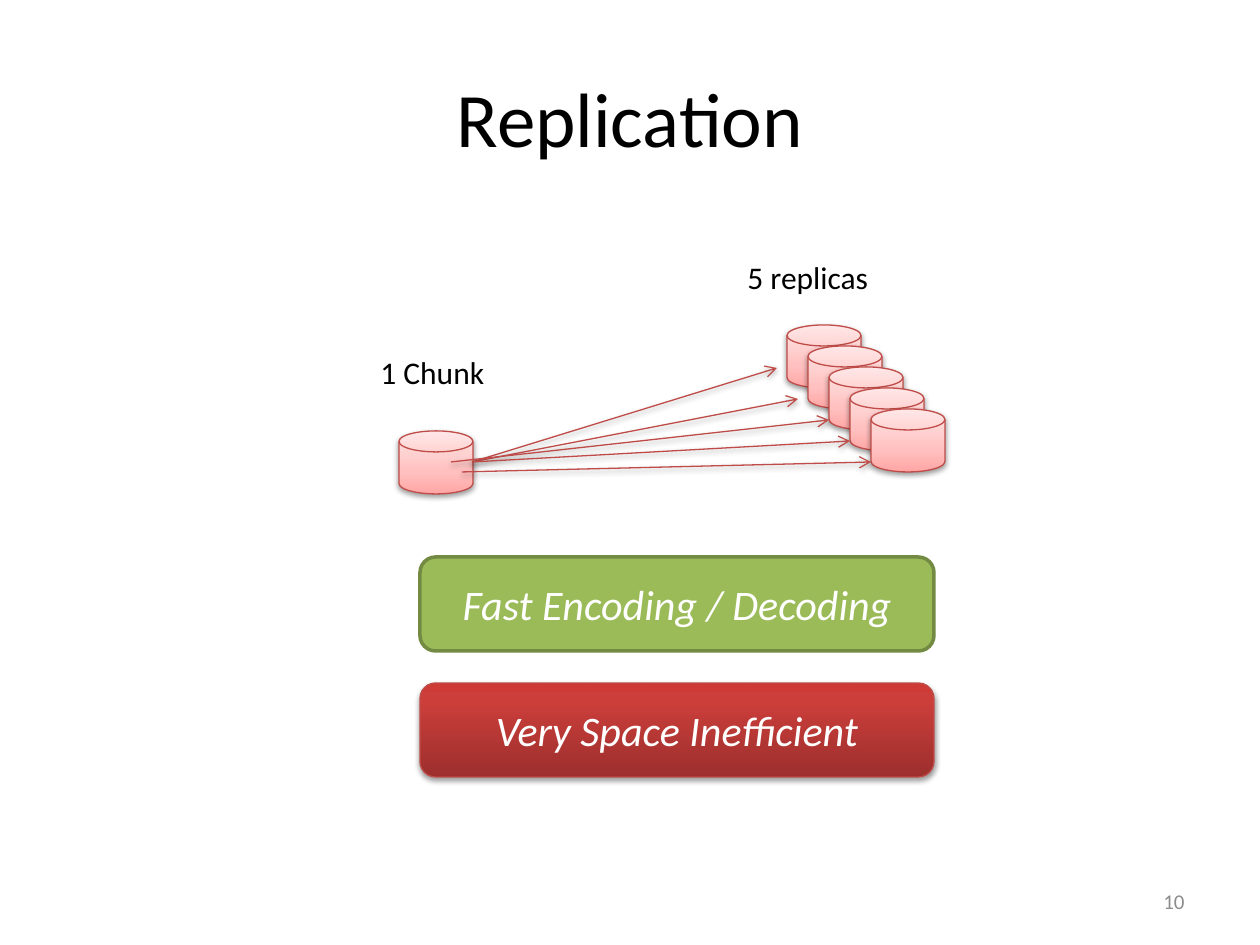
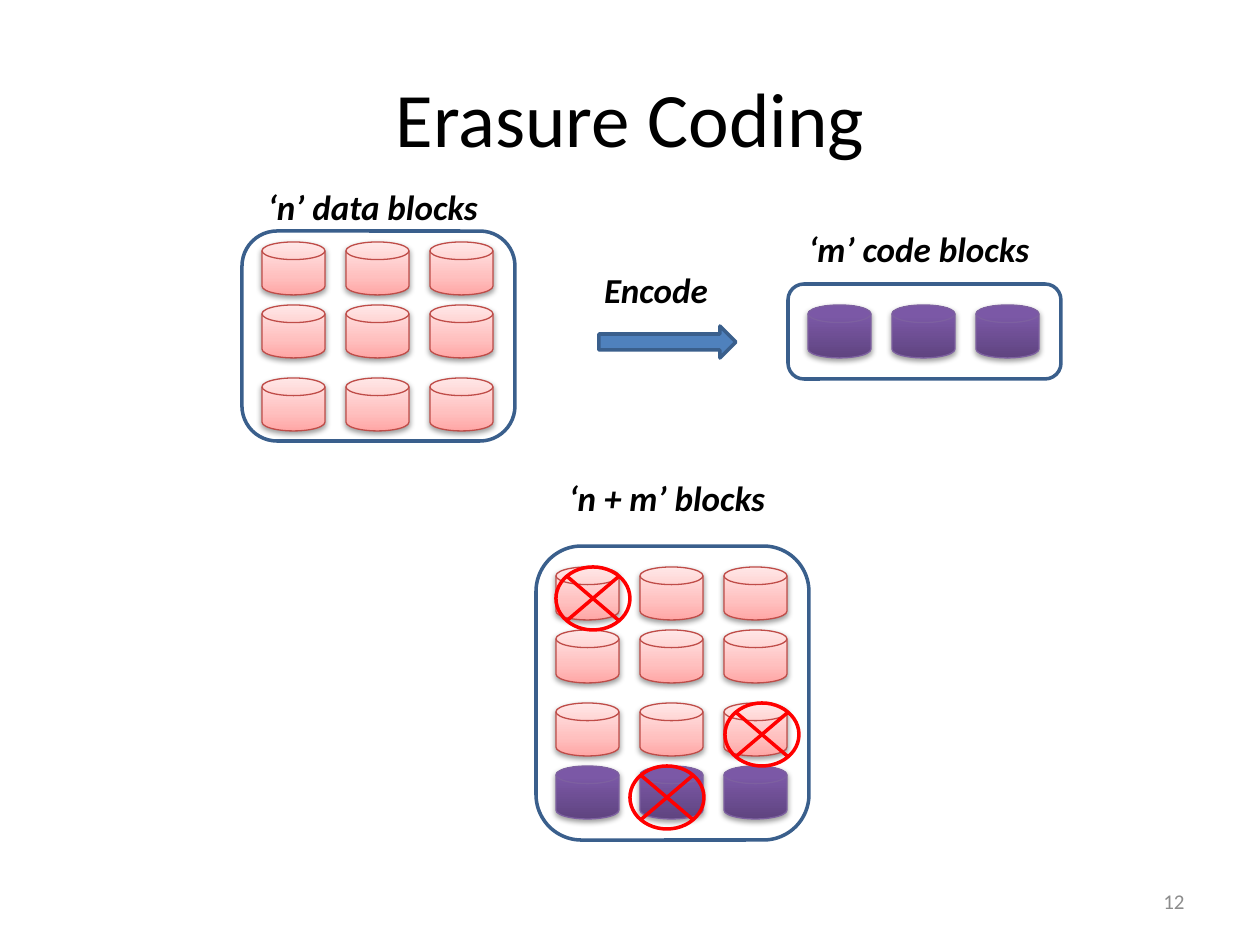
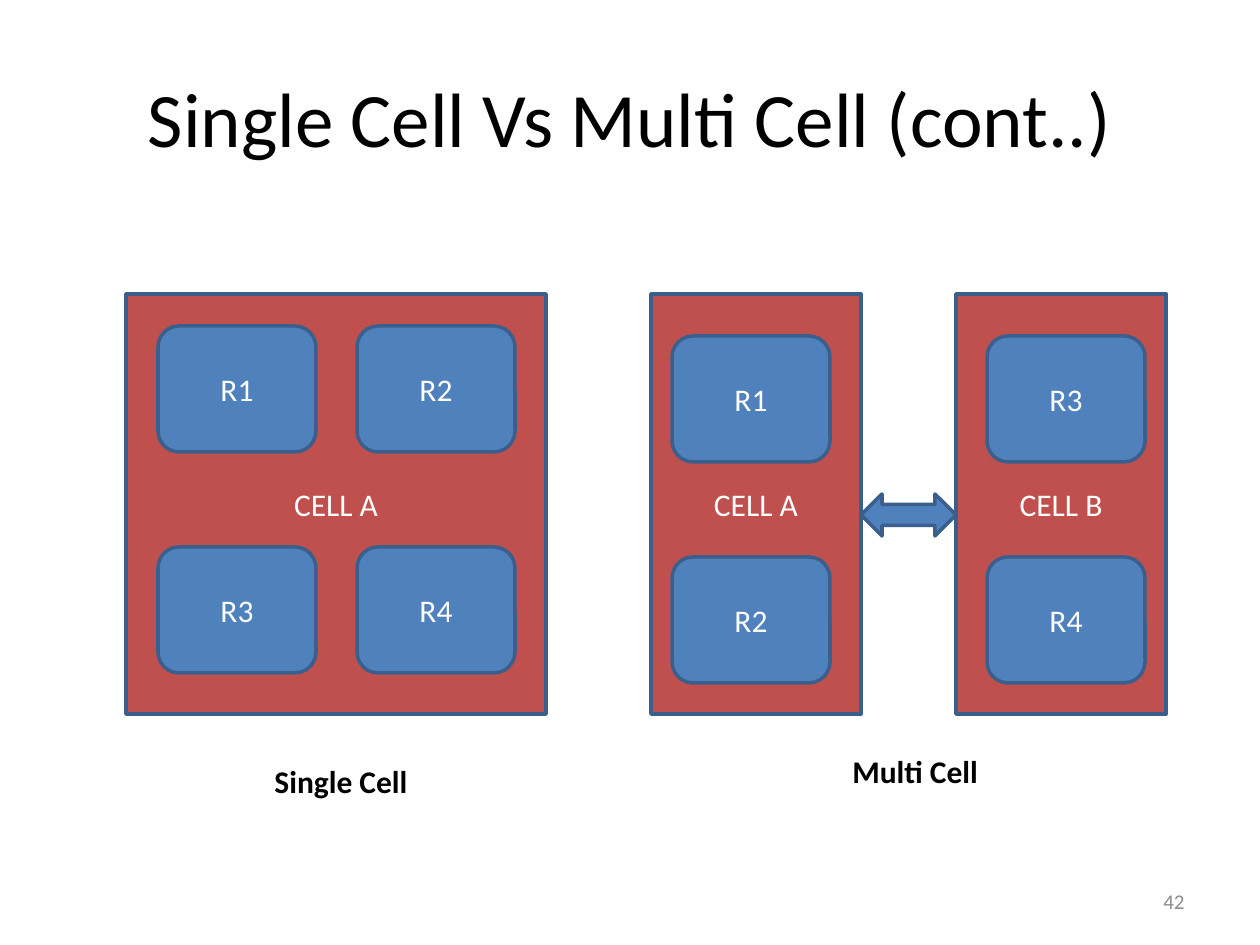
from copy import deepcopy

from pptx import Presentation
from pptx.dml.color import RGBColor
from pptx.enum.shapes import MSO_CONNECTOR as LINK, MSO_SHAPE as KIND
from pptx.enum.text import MSO_ANCHOR as ANCHOR, PP_ALIGN as ALIGN
from pptx.oxml import parse_xml
from pptx.oxml.ns import nsdecls, qn
from pptx.util import Emu, Pt

PX = 914400 / 126
FONT = "Calibri"
BLACK = RGBColor(0x00, 0x00, 0x00)
WHITE = RGBColor(0xFF, 0xFF, 0xFF)
GRAY = RGBColor(0x8C, 0x8C, 0x8C)
BLUE = RGBColor(0x4F, 0x81, 0xBD)
NAVY = RGBColor(0x3A, 0x5F, 0x8C)
BRICK = RGBColor(0xC0, 0x50, 0x4D)
RUST = RGBColor(0xBF, 0x4C, 0x48)
PLUM = RGBColor(0x7D, 0x60, 0xA0)
GREEN = RGBColor(0x9B, 0xBB, 0x59)
OLIVE = RGBColor(0x73, 0x8A, 0x42)
RED = RGBColor(0xFF, 0x00, 0x00)

# Gradient stops run from the bottom edge to the top
PINK_FADE = [(0, RGBColor(0xFF, 0xA6, 0xA5)), (0.35, RGBColor(0xFF, 0xC0, 0xBF)),
             (1, RGBColor(0xFF, 0xE7, 0xE7))]
RED_FADE = [(0, RGBColor(0x9C, 0x2F, 0x2D)), (0.8, RGBColor(0xCB, 0x3E, 0x3A)),
            (1, RGBColor(0xCE, 0x3B, 0x37))]
PLUM_FADE = [(0, RGBColor(0x5F, 0x44, 0x80)), (0.8, RGBColor(0x7B, 0x58, 0xA6)),
             (1, RGBColor(0x7C, 0x57, 0xA8))]
SHADE = (f'<a:effectLst {nsdecls("a")}><a:outerShdw blurRad="40000" dist="20000" '
         'dir="5400000" rotWithShape="0"><a:srgbClr val="000000">'
         '<a:alpha val="38000"/></a:srgbClr></a:outerShdw></a:effectLst>')
ARROW = f'<a:tailEnd {nsdecls("a")} type="arrow"/>'


def write(frame, text, size=18, color=BLACK, align=ALIGN.LEFT, anchor=ANCHOR.TOP,
          bold=False, italic=False, wrap=True):
    frame.word_wrap = wrap
    frame.vertical_anchor = anchor
    para = frame.paragraphs[0]
    para.alignment = align
    run = para.add_run()
    run.text = text
    font = run.font
    font.name, font.size, font.bold, font.italic = FONT, Pt(size), bold, italic
    font.color.rgb = color


def draw(slide, kind, box, fill, line, text="", size=18, italic=False):
    """Add a preset shape; a list of stops as fill gives a shadowed gradient."""
    shape = slide.shapes.add_shape(kind, *[round(v * PX) for v in box])
    fade = isinstance(fill, list)
    if fade:
        shape.fill.gradient()
        shape.fill.gradient_angle = 90
        stops = shape.element.spPr.find(".//" + qn("a:gsLst"))
        stops.insert(1, deepcopy(stops[0]))
        for stop, (place, color) in zip(shape.fill.gradient_stops, fill):
            stop.position = place
            stop.color.rgb = color
    elif fill is None:
        shape.fill.background()
    else:
        shape.fill.solid()
        shape.fill.fore_color.rgb = fill
    shape.line.color.rgb = line
    shape.line.width = Pt(0.75 if fade else 2)
    if fade:
        shape.element.spPr.append(parse_xml(SHADE))
    else:
        shape.shadow.inherit = False
    if text:
        write(shape.text_frame, text, size, WHITE, ALIGN.CENTER, ANCHOR.MIDDLE,
              italic=italic)


deck = Presentation()
deck.slide_width, deck.slide_height = Emu(9144000), Emu(6858000)

# Titles and page numbers
slides = []
for name, page in [("Replication", "10"), ("Erasure Coding", "12"),
                   ("Single Cell Vs Multi Cell (cont..)", "42")]:
    slide = deck.slides.add_slide(deck.slide_layouts[5])
    title = slide.shapes.title
    title.left, title.top, title.width, title.height = [
        round(v * PX) for v in (63, 38, 1134, 157)]
    write(title.text_frame, name, 44, align=ALIGN.CENTER, anchor=ANCHOR.MIDDLE)
    foot = slide.shapes.add_textbox(*[round(v * PX) for v in (903, 876, 294, 50)])
    write(foot.text_frame, page, 12, GRAY, ALIGN.RIGHT, ANCHOR.MIDDLE)
    slides.append(slide)
copies, coding, cells = slides

# Replication: one chunk fans out to five replicas
for i in range(5):
    draw(copies, KIND.FLOWCHART_MAGNETIC_DISK, (787 + 21 * i, 325 + 21 * i, 74, 63),
         PINK_FADE, RUST)
draw(copies, KIND.FLOWCHART_MAGNETIC_DISK, (399, 431, 74, 63), PINK_FADE, RUST)
for ends in [(472, 462, 777, 368), (472, 462, 798, 399), (451, 462, 829, 420),
             (472, 462, 850, 441), (462, 472, 871, 462)]:
    link = copies.shapes.add_connector(LINK.STRAIGHT, *[round(v * PX) for v in ends])
    link.line.color.rgb = RUST
    link.line.width = Pt(0.75)
    link.line._get_or_add_ln().append(parse_xml(ARROW))
    link.element.spPr.append(parse_xml(SHADE))
draw(copies, KIND.ROUNDED_RECTANGLE, (420, 557, 514, 94), GREEN, OLIVE,
     "Fast Encoding / Decoding", 24, True)
draw(copies, KIND.ROUNDED_RECTANGLE, (420, 683, 514, 94), RED_FADE, RUST,
     "Very Space Inefficient", 24, True)

# Erasure coding: rows of three blocks
for left, top, fade, line in [
        (262, 242, PINK_FADE, RUST), (262, 305, PINK_FADE, RUST),
        (262, 378, PINK_FADE, RUST), (556, 567, PINK_FADE, RUST),
        (556, 630, PINK_FADE, RUST), (556, 703, PINK_FADE, RUST),
        (556, 766, PLUM_FADE, PLUM), (808, 305, PLUM_FADE, PLUM)]:
    for col in range(3):
        draw(coding, KIND.FLOWCHART_MAGNETIC_DISK, (left + 84 * col, top, 63, 53),
             fade, line)
draw(coding, KIND.RIGHT_ARROW, (599, 326, 137, 32), BLUE, NAVY)
for text, left, top in [("‘n’ data blocks", 242, 179), ("Encode", 525, 262),
                        ("‘n + m’ blocks", 536, 470), ("‘m’ code blocks", 788, 221)]:
    box = coding.shapes.add_textbox(*[round(v * PX) for v in (left, top, 262, 55)])
    write(box.text_frame, text, 20, align=ALIGN.CENTER, bold=True, italic=True)
for left, top, high in [(242, 231, 210), (536, 546, 294), (788, 284, 95)]:
    draw(coding, KIND.ROUNDED_RECTANGLE, (left, top, 273, high), None, NAVY)
for left, top in [(556, 567), (630, 766), (725, 703)]:
    draw(coding, KIND.FLOWCHART_SUMMING_JUNCTION, (left, top, 74, 63), None, RED)

# Cells and the racks inside them, filled row by row
draw(cells, KIND.LEFT_RIGHT_ARROW, (861, 494, 95, 42), BLUE, NAVY)
for name, left, wide, cols, top, racks in [
        ("CELL A", 126, 420, (158, 357), 326, ("R1", "R2", "R3", "R4")),
        ("CELL B", 956, 210, (987,), 336, ("R3", "R4")),
        ("CELL A", 651, 210, (672,), 336, ("R1", "R2"))]:
    draw(cells, KIND.RECTANGLE, (left, 294, wide, 420), BRICK, NAVY, name)
    for i, rack in enumerate(racks):
        row, col = divmod(i, len(cols))
        draw(cells, KIND.ROUNDED_RECTANGLE, (cols[col], top + 221 * row, 158, 126),
             BLUE, NAVY, rack)

# Plain captions
for slide, text, spot, bold, wrap in [
        (copies, "1 Chunk", (368, 347, 131, 50), False, False),
        (copies, "5 replicas", (735, 252, 147, 50), False, False),
        (cells, "Single Cell", (262, 756, 159, 50), True, False),
        (cells, "Multi Cell", (840, 746, 199, 53), True, True)]:
    box = slide.shapes.add_textbox(*[round(v * PX) for v in spot])
    write(box.text_frame, text, bold=bold, wrap=wrap)

deck.save("out.pptx")
